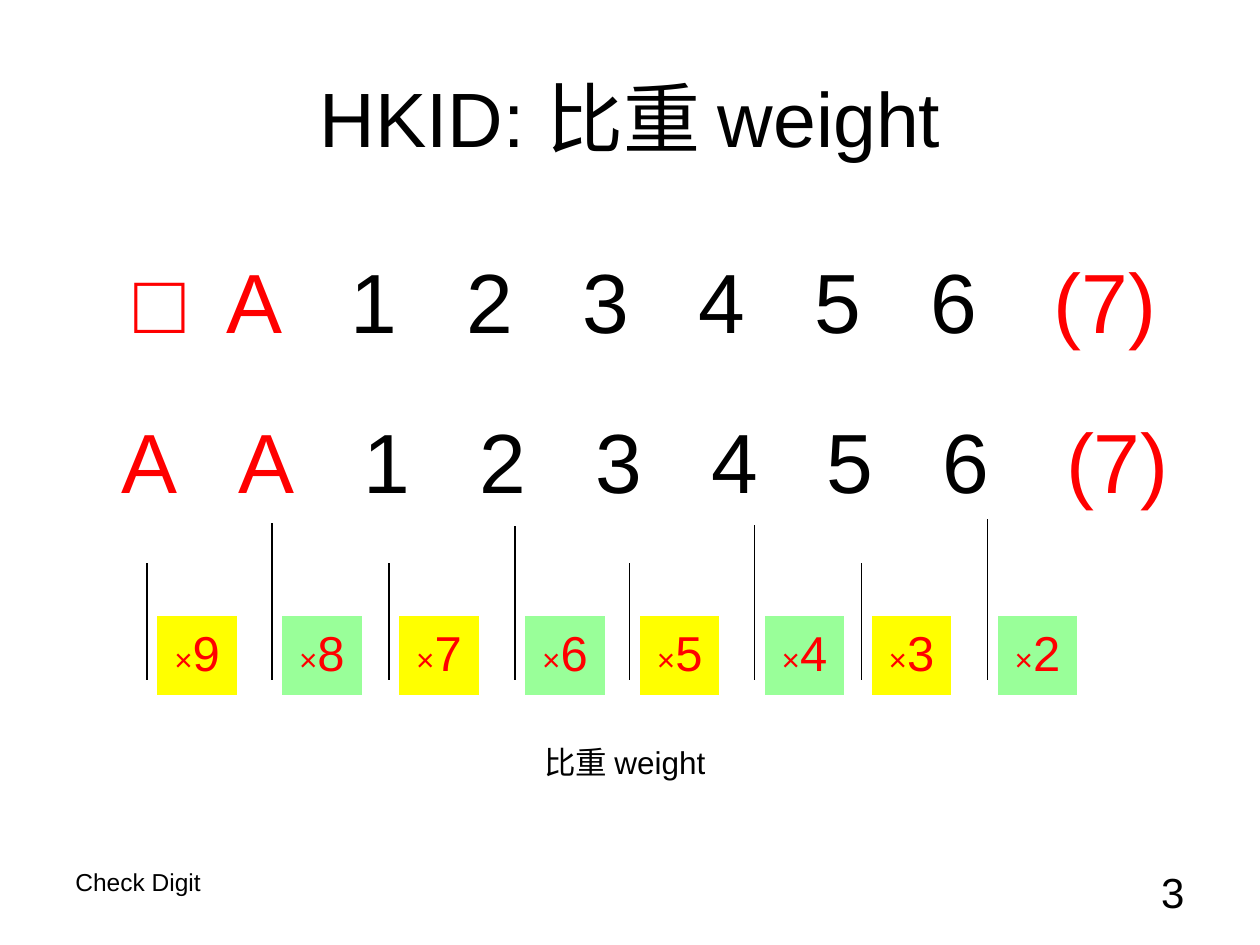
from pptx import Presentation
from pptx import util as u
from pptx.dml.color import RGBColor
from pptx.enum import shapes, text

RED, BLACK, YELLOW, GREEN = "FF0000", "000000", "FFFF00", "99FF99"
WIDTH, HEIGHT = 10, 7.5


def colour(value):
    return RGBColor.from_string(value)


class SlideBuilder:
    font = "Arial"

    def __init__(self, presentation):
        self.slide = presentation.slides.add_slide(presentation.slide_layouts[5])

    def box(self, left, top, width, height):
        return [u.Inches(share * size / 100) for share, size in
                ((left, WIDTH), (top, HEIGHT), (width, WIDTH), (height, HEIGHT))]

    def fill_text(self, shape, runs, align, anchor=text.MSO_ANCHOR.TOP):
        frame = shape.text_frame
        frame.word_wrap = True
        frame.vertical_anchor = anchor
        paragraph = frame.paragraphs[0]
        paragraph.alignment = align
        for words, size, ink in runs:
            run = paragraph.add_run()
            run.text = words
            run.font.name = self.font
            run.font.size = u.Pt(size)
            run.font.color.rgb = colour(ink)
        return paragraph

    def title(self, words, area):
        shape = self.slide.shapes.title
        shape.left, shape.top, shape.width, shape.height = self.box(*area)
        self.fill_text(shape, [(words, 44, BLACK)], text.PP_ALIGN.CENTER,
                       text.MSO_ANCHOR.MIDDLE)

    def label(self, words, size, area, align):
        shape = self.slide.shapes.add_textbox(*self.box(*area))
        self.fill_text(shape, [(words, size, BLACK)], align)

    def identity_row(self, prefix, top, stops):
        shape = self.slide.shapes.add_textbox(*self.box(6.7, top, 89.2, 12))
        groups = ((prefix, RED), ("123456", BLACK), (["(7)"], RED))
        runs = [("".join("\t" + mark for mark in marks), 48, ink)
                for marks, ink in groups]
        paragraph = self.fill_text(shape, runs, text.PP_ALIGN.LEFT)
        properties = paragraph._p.get_or_add_pPr()
        tabs = properties.makeelement(
            "{http://schemas.openxmlformats.org/drawingml/2006/main}tabLst", {})
        properties.append(tabs)
        for stop in stops:
            tab = tabs.makeelement(tabs.tag.replace("tabLst", "tab"),
                                   {"pos": str(u.Inches(stop)), "algn": "ctr"})
            tabs.append(tab)

    def weight(self, number, left, reach, fill):
        shape = self.slide.shapes.add_shape(
            shapes.MSO_SHAPE.LINE_CALLOUT_1_NO_BORDER,
            *self.box(left, 65.2, 6.3, 8.4))
        shape.shadow.inherit = False
        shape.fill.solid()
        shape.fill.fore_color.rgb = colour(fill)
        shape.line.color.rgb = colour(BLACK)
        shape.line.width = u.Pt(0.75)
        for index, value in enumerate((0.8, -0.13, -reach, -0.13)):
            shape.adjustments[index] = value
        self.fill_text(shape, [("×", 18, RED), (str(number), 28, RED)],
                       text.PP_ALIGN.CENTER)


def main():
    presentation = Presentation()
    presentation.slide_width = u.Inches(WIDTH)
    presentation.slide_height = u.Inches(HEIGHT)
    builder = SlideBuilder(presentation)

    builder.title("HKID: 比重 weight", (5, 4, 90, 16.67))

    pitch = 0.92
    for prefix, top, first, second in (("□A", 25.73, 0.5, 1.25),
                                       ("AA", 42.67, 0.42, 1.35)):
        digits = [second + 0.03 + pitch * step for step in range(1, 7)]
        builder.identity_row(prefix, top,
                             [first, second, *digits, second + 6.75])

    callouts = ((12.5, 0.67), (22.4, 1.17), (31.7, 0.67), (41.7, 1.13),
                (50.8, 0.67), (60.7, 1.15), (69.2, 0.67), (79.2, 1.22))
    for index, (left, reach) in enumerate(callouts):
        builder.weight(9 - index, left, reach, (YELLOW, GREEN)[index % 2])

    builder.label("比重 weight", 18, (40, 78, 19.2, 5.33), text.PP_ALIGN.CENTER)
    builder.label("Check Digit", 14, (5, 91.07, 23.3, 6.93), text.PP_ALIGN.LEFT)
    builder.label("3", 24, (71.7, 91.07, 23.3, 6.93), text.PP_ALIGN.RIGHT)
    presentation.save("out.pptx")


if __name__ == "__main__":
    main()
